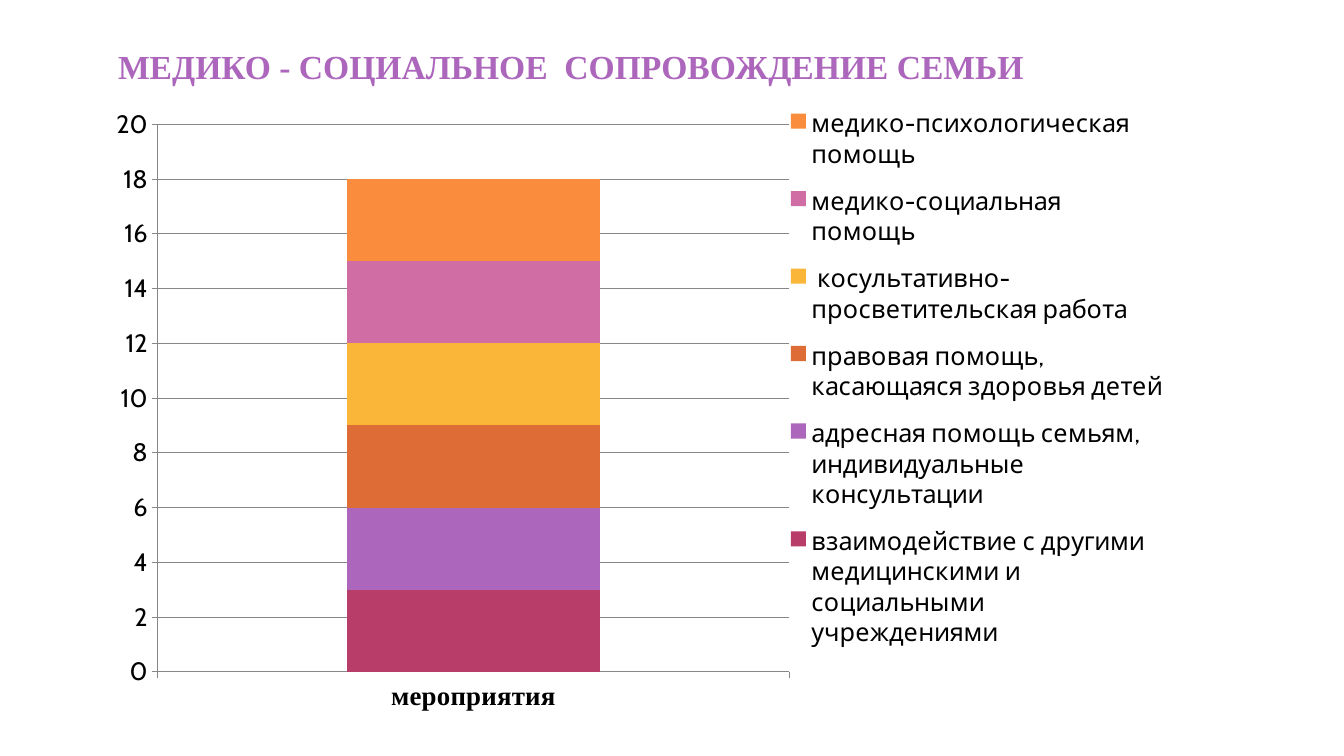
from lxml import etree
from pptx import Presentation
from pptx.chart.data import CategoryChartData
from pptx.dml.color import RGBColor
from pptx.enum.chart import XL_CHART_TYPE, XL_LEGEND_POSITION, XL_TICK_MARK
from pptx.enum.text import MSO_ANCHOR, PP_ALIGN
from pptx.oxml.ns import qn
from pptx.util import Cm, Pt

STACKED = XL_CHART_TYPE.COLUMN_STACKED
RIGHT = XL_LEGEND_POSITION.RIGHT
OUTSIDE = XL_TICK_MARK.OUTSIDE

TITLE = "МЕДИКО - СОЦИАЛЬНОЕ  СОПРОВОЖДЕНИЕ СЕМЬИ"
CATEGORY = "мероприятия"
SERIES = [
    ("взаимодействие с другими медицинскими и социальными учреждениями", 3, "berry"),
    ("адресная помощь семьям, индивидуальные консультации", 3, "violet"),
    ("правовая помощь, касающаяся здоровья детей", 3, "rust"),
    (" косультативно-просветительская работа", 3, "yellow"),
    ("медико-социальная помощь", 3, "pink"),
    ("медико-психологическая помощь", 3, "orange"),
]
COLOURS = {
    "berry": "B83D68", "violet": "AC66BB", "rust": "DE6C36", "yellow": "F9B639",
    "pink": "CF6DA4", "orange": "FA8D3D", "black": "000000", "line": "878787",
}
FONTS = {
    "title": {"name": "Times New Roman", "size": Pt(24), "bold": True},
    "chart": {"name": "Cabin", "size": Pt(18)},
    "category": {"name": "Times New Roman", "size": Pt(19.2), "bold": True},
}
# Shares of the chart area: left, top, width, height
PLOT_AREA = (0.083, 0.05, 0.567, 0.846)
LEGEND_AREA = (0.657, 0, 0.336, 0.885)


def rgb(name):
    return RGBColor.from_string(COLOURS[name])


def set_font(font, kind, colour):
    for key, value in FONTS[kind].items():
        setattr(font, key, value)
    font.color.rgb = rgb(colour)


def place(parent, index, area, inner=False):
    """Give a chart part a fixed position within the chart area."""
    for old in parent.findall(qn("c:layout")):
        parent.remove(old)
    layout = etree.Element(qn("c:layout"))
    manual = etree.SubElement(layout, qn("c:manualLayout"))
    settings = [("layoutTarget", "inner")] if inner else []
    settings += [("xMode", "edge"), ("yMode", "edge")]
    settings += zip("xywh", map(str, area))
    for tag, value in settings:
        etree.SubElement(manual, qn("c:" + tag)).set("val", value)
    parent.insert(index, layout)


def add_chart(page):
    data = CategoryChartData()
    data.categories = [CATEGORY]
    for name, value, _ in SERIES:
        data.add_series(name, [value])
    frame = page.shapes.add_chart(STACKED, Cm(1.64), Cm(2.32), Cm(28.09), Cm(16.31), data)
    chart = frame.chart
    chart.has_title = False
    set_font(chart.font, "chart", "black")

    plot = chart.plots[0]
    plot.gap_width, plot.overlap = 150, 100
    plot.vary_by_categories = False
    for series, (_, _, colour) in zip(plot.series, SERIES):
        series.format.fill.solid()
        series.format.fill.fore_color.rgb = rgb(colour)

    values, categories = chart.value_axis, chart.category_axis
    values.minimum_scale, values.maximum_scale, values.major_unit = 0, 20, 2
    values.has_major_gridlines = True
    for axis in (values, categories):
        axis.major_tick_mark = OUTSIDE
    for part in (values, categories, values.major_gridlines):
        part.format.line.color.rgb = rgb("line")
        part.format.line.width = Pt(0.75)
    set_font(categories.tick_labels.font, "category", "black")

    chart.has_legend = True
    legend = chart.legend
    legend.position = RIGHT
    legend.include_in_layout = False
    place(chart.element.find(".//" + qn("c:plotArea")), 0, PLOT_AREA, inner=True)
    place(chart.element.find(".//" + qn("c:legend")), 1, LEGEND_AREA)


def add_title(page):
    box = page.shapes.add_textbox(0, Cm(0.4), Cm(28.78), Cm(1.78))
    text = box.text_frame
    frame_format = {
        "word_wrap": True, "vertical_anchor": MSO_ANCHOR.BOTTOM,
        "margin_left": Cm(0.13), "margin_right": Cm(0.13),
        "margin_top": 0, "margin_bottom": 0,
    }
    for key, value in frame_format.items():
        setattr(text, key, value)
    para = text.paragraphs[0]
    para.alignment = PP_ALIGN.CENTER
    span = para.add_run()
    span.text = TITLE
    set_font(span.font, "title", "violet")


def main():
    deck = Presentation()
    deck.slide_width, deck.slide_height = Cm(33.87), Cm(19.05)
    page = deck.slides.add_slide(deck.slide_layouts[6])
    add_chart(page)
    add_title(page)
    deck.save("out.pptx")


if __name__ == "__main__":
    main()
